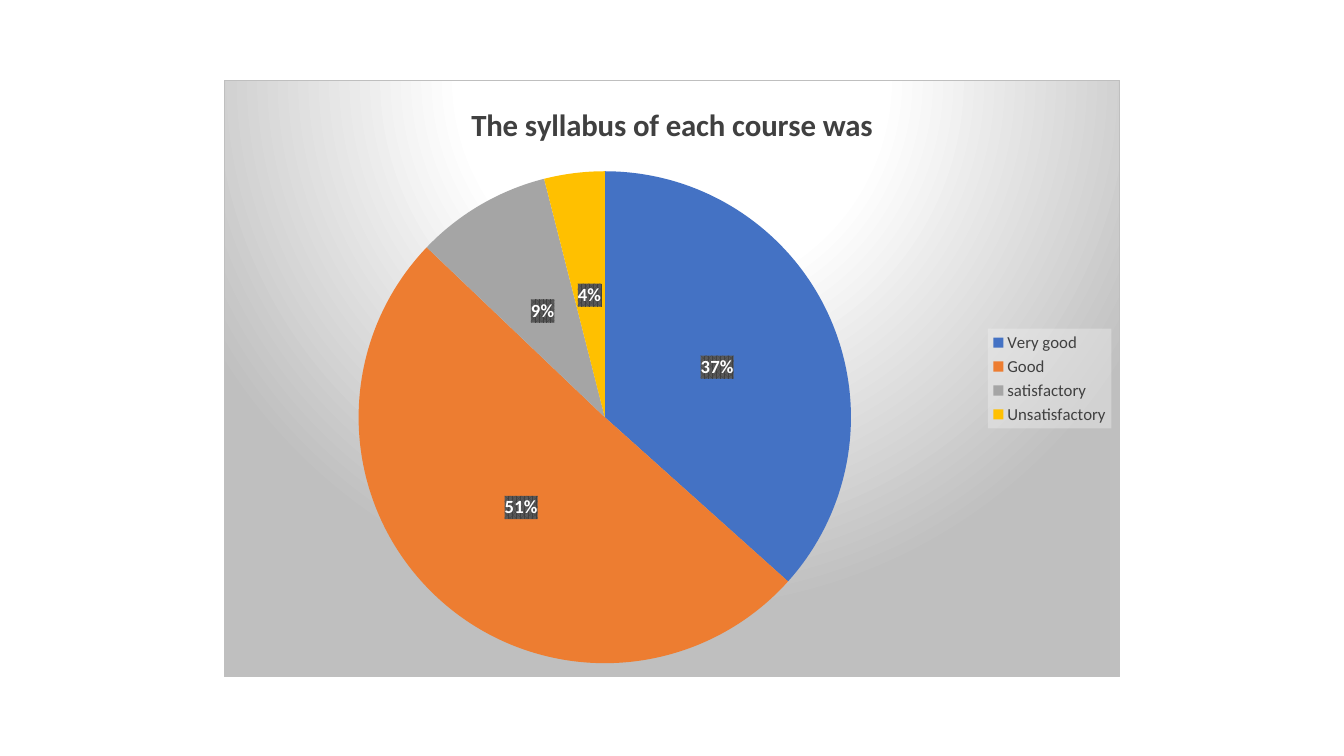
"""Build a slide with one pie chart of syllabus ratings."""
from dataclasses import dataclass

from pptx import Presentation
from pptx.chart.data import CategoryChartData
from pptx.dml.color import RGBColor
from pptx.enum.chart import XL_CHART_TYPE as ChartType
from pptx.enum.chart import XL_LABEL_POSITION as LabelPosition
from pptx.enum.chart import XL_LEGEND_POSITION as LegendPosition
from pptx.oxml import parse_xml
from pptx.oxml.ns import nsdecls, qn
from pptx.util import Inches, Pt


@dataclass(frozen=True)
class Theme:
    font: str = "Calibri"
    text: str = "404040"
    label_text: str = "FFFFFF"
    label_stripe: str = "595959"
    panel_light: str = "FFFFFF"
    panel_dark: str = "BFBFBF"
    legend_fill: str = "F2F2F2"
    title_size: float = 22
    legend_size: float = 12
    label_size: float = 13.3
    base_size: float = 10


THEME = Theme()
TITLE = "The syllabus of each course was"
RATINGS = [
    ("Very good", 37, "4472C4"),
    ("Good", 51, "ED7D31"),
    ("satisfactory", 9, "A5A5A5"),
    ("Unsatisfactory", 4, "FFC000"),
]
PLOT_LAYOUT = {"x": 0.15, "y": 0.15, "w": 0.55, "h": 0.83}


def style_font(font, size, color, bold=False):
    """Apply the theme typeface with a size, colour and weight."""
    font.name = THEME.font
    font.size = Pt(size)
    font.bold = bold
    font.color.rgb = RGBColor.from_string(color)


def color_xml(color, inner=""):
    """Return the XML of one colour."""
    return f'<a:srgbClr val="{color}">{inner}</a:srgbClr>'


def set_chart_part_fill(part, content):
    """Give a chart part its fill and line, ahead of its text settings."""
    properties = parse_xml(f'<c:spPr {nsdecls("c", "a")}>{content}</c:spPr>')
    part.find(qn("c:txPr")).addprevious(properties)


def panel_fill():
    """Return the radial gradient and the border of the chart panel."""
    stops = [(0, THEME.panel_light), (39, THEME.panel_light), (100, THEME.panel_dark)]
    stop_xml = "".join(
        f'<a:gs pos="{position * 1000}">{color_xml(color)}</a:gs>' for position, color in stops
    )
    return (
        f'<a:gradFill><a:gsLst>{stop_xml}</a:gsLst><a:path path="circle">'
        '<a:fillToRect l="50000" t="-80000" r="50000" b="180000"/></a:path></a:gradFill>'
        f'<a:ln w="{Pt(0.75)}"><a:solidFill>{color_xml(THEME.panel_dark)}</a:solidFill></a:ln>'
    )


def label_fill():
    """Return the dark pattern behind the data labels."""
    return (
        f'<a:pattFill prst="pct75"><a:fgClr>{color_xml(THEME.text)}</a:fgClr>'
        f"<a:bgClr>{color_xml(THEME.label_stripe)}</a:bgClr></a:pattFill>"
    )


def legend_fill():
    """Return the translucent fill of the legend."""
    color = color_xml(THEME.legend_fill, '<a:alpha val="39000"/>')
    return f"<a:solidFill>{color}</a:solidFill>"


def set_plot_layout(plot_area):
    """Fix the place of the pie within the chart panel."""
    for layout in plot_area.findall(qn("c:layout")):
        plot_area.remove(layout)
    modes = "".join(f'<c:{axis}Mode val="edge"/>' for axis in "xy")
    places = "".join(f'<c:{key} val="{value}"/>' for key, value in PLOT_LAYOUT.items())
    plot_area.insert(0, parse_xml(
        f'<c:layout {nsdecls("c")}><c:manualLayout><c:layoutTarget val="inner"/>'
        f"{modes}{places}</c:manualLayout></c:layout>"
    ))


def style_title(chart):
    """Write the chart title."""
    chart.has_title = True
    paragraph = chart.chart_title.text_frame.paragraphs[0]
    paragraph.text = TITLE
    style_font(paragraph.font, THEME.title_size, THEME.text, bold=True)


def style_legend(chart):
    """Place the legend at the right on a translucent panel."""
    chart.has_legend = True
    legend = chart.legend
    legend.position = LegendPosition.RIGHT
    legend.include_in_layout = False
    style_font(legend.font, THEME.legend_size, THEME.text)
    set_chart_part_fill(chart.element.find(".//" + qn("c:legend")), legend_fill())


def style_slices(chart):
    """Colour the slices and label them with their shares."""
    plot = chart.plots[0]
    plot.vary_by_categories = True
    series = plot.series[0]
    for index, (_, _, color) in enumerate(RATINGS):
        fill = series.points[index].format.fill
        fill.solid()
        fill.fore_color.rgb = RGBColor.from_string(color)
    labels = series.data_labels
    labels.show_value = True
    labels.number_format = '0"%"'
    labels.number_format_is_linked = False
    labels.position = LabelPosition.CENTER
    style_font(labels.font, THEME.label_size, THEME.label_text, bold=True)
    set_chart_part_fill(chart.element.find(".//" + qn("c:dLbls")), label_fill())


def add_ratings_pie(slide):
    """Add the pie chart of ratings."""
    data = CategoryChartData()
    data.categories = [name for name, _, _ in RATINGS]
    data.add_series(TITLE, [share for _, share, _ in RATINGS])
    chart = slide.shapes.add_chart(
        ChartType.PIE, Inches(2.22), Inches(0.79), Inches(8.89), Inches(5.93), data
    ).chart
    style_font(chart.font, THEME.base_size, "000000")
    set_chart_part_fill(chart.element, panel_fill())
    set_plot_layout(chart.element.find(".//" + qn("c:plotArea")))
    style_title(chart)
    style_legend(chart)
    style_slices(chart)


def main():
    """Create and save the presentation."""
    presentation = Presentation()
    presentation.slide_width = Inches(13.33)
    presentation.slide_height = Inches(7.5)
    slide = presentation.slides.add_slide(presentation.slide_layouts[6])
    add_ratings_pie(slide)
    presentation.save("out.pptx")


if __name__ == "__main__":
    main()
